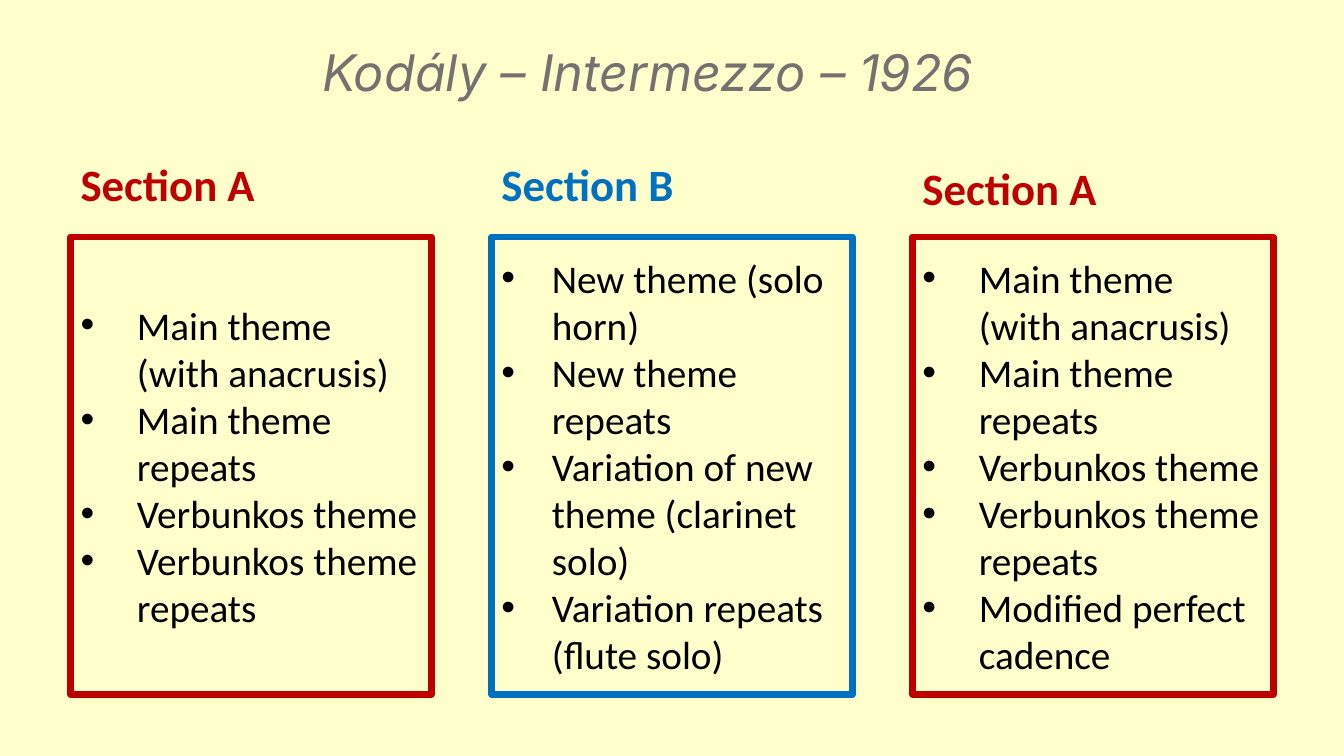
from lxml.etree import SubElement
from pptx import Presentation
from pptx.dml.color import RGBColor
from pptx.enum.shapes import MSO_SHAPE
from pptx.enum.text import MSO_ANCHOR, MSO_AUTO_SIZE, PP_ALIGN
from pptx.oxml.ns import qn
from pptx.util import Inches, Pt

COLORS = {"background": "FFFFCC", "title": "767171", "text": "000000",
          "A": "C00000", "B": "0070C0"}

# Column grid, in inches
LEFT, COLUMN_WIDTH, COLUMN_STEP = 0.7, 3.58, 4.175
BOX_TOP, BOX_HEIGHT, HEADING_HEIGHT = 2.35, 4.54, 0.64

MAIN_THEMES = ["Main theme (with anacrusis)", "Main theme repeats",
               "Verbunkos theme", "Verbunkos theme repeats"]
NEW_THEMES = ["New theme (solo horn)", "New theme repeats",
              "Variation of new theme (clarinet solo)",
              "Variation repeats (flute solo)"]

# Section letter, heading top, bullet indent, themes
SECTIONS = [
    ("A", 1.51, 0.56, MAIN_THEMES),
    ("B", 1.51, 0.5, NEW_THEMES),
    ("A", 1.55, 0.56, MAIN_THEMES + ["Modified perfect cadence"]),
]


def color(name):
    return RGBColor.from_string(COLORS[name])


def format_text(paragraph, size, color_name, font="Calibri", bold=False, italic=False):
    for run in paragraph.runs:
        run.font.name = font
        run.font.size = Pt(size)
        run.font.bold = bold
        run.font.italic = italic
        run.font.color.rgb = color(color_name)


def add_bullet(paragraph, indent):
    properties = paragraph._p.get_or_add_pPr()
    properties.set("marL", str(Inches(indent)))
    properties.set("indent", str(-Inches(indent)))
    SubElement(properties, qn("a:buFont"), typeface="Arial")
    SubElement(properties, qn("a:buChar"), char="•")


def place_title(slide, left, top, width, height):
    title = slide.shapes.title
    title.left, title.top = Inches(left), Inches(top)
    title.width, title.height = Inches(width), Inches(height)
    frame = title.text_frame
    frame.text = "Kodály – Intermezzo – 1926"
    frame.auto_size = MSO_AUTO_SIZE.NONE
    frame.vertical_anchor = MSO_ANCHOR.TOP
    frame.paragraphs[0].alignment = PP_ALIGN.CENTER
    format_text(frame.paragraphs[0], 36, "title", font="Inter", italic=True)


def add_heading(slide, letter, left, top, width, height):
    heading = slide.shapes.add_textbox(
        Inches(left), Inches(top), Inches(width), Inches(height))
    frame = heading.text_frame
    frame.word_wrap = True
    frame.text = f"Section {letter}"
    format_text(frame.paragraphs[0], 32, letter, bold=True)


def add_theme_box(slide, letter, themes, indent, left, top, width, height):
    theme_box = slide.shapes.add_shape(
        MSO_SHAPE.RECTANGLE, Inches(left), Inches(top), Inches(width), Inches(height))
    theme_box.shadow.inherit = False
    theme_box.fill.background()
    theme_box.line.color.rgb = color(letter)
    theme_box.line.width = Pt(4.5)
    frame = theme_box.text_frame
    frame.word_wrap = True
    frame.vertical_anchor = MSO_ANCHOR.MIDDLE
    frame.text = "\n".join(themes)
    for paragraph in frame.paragraphs:
        paragraph.alignment = PP_ALIGN.LEFT
        add_bullet(paragraph, indent)
        format_text(paragraph, 28, "text")


def main():
    presentation = Presentation()
    presentation.slide_width, presentation.slide_height = Inches(13.33), Inches(7.5)
    slide = presentation.slides.add_slide(presentation.slide_layouts[5])
    slide.background.fill.solid()
    slide.background.fill.fore_color.rgb = color("background")

    place_title(slide, LEFT, 0.36, 11.45, 0.71)

    # Three sections side by side
    for column, (letter, heading_top, indent, themes) in enumerate(SECTIONS):
        left = LEFT + column * COLUMN_STEP
        add_theme_box(slide, letter, themes, indent,
                      left, BOX_TOP, COLUMN_WIDTH, BOX_HEIGHT)
        add_heading(slide, letter, left, heading_top, COLUMN_WIDTH, HEADING_HEIGHT)

    presentation.save("out.pptx")


if __name__ == "__main__":
    main()
